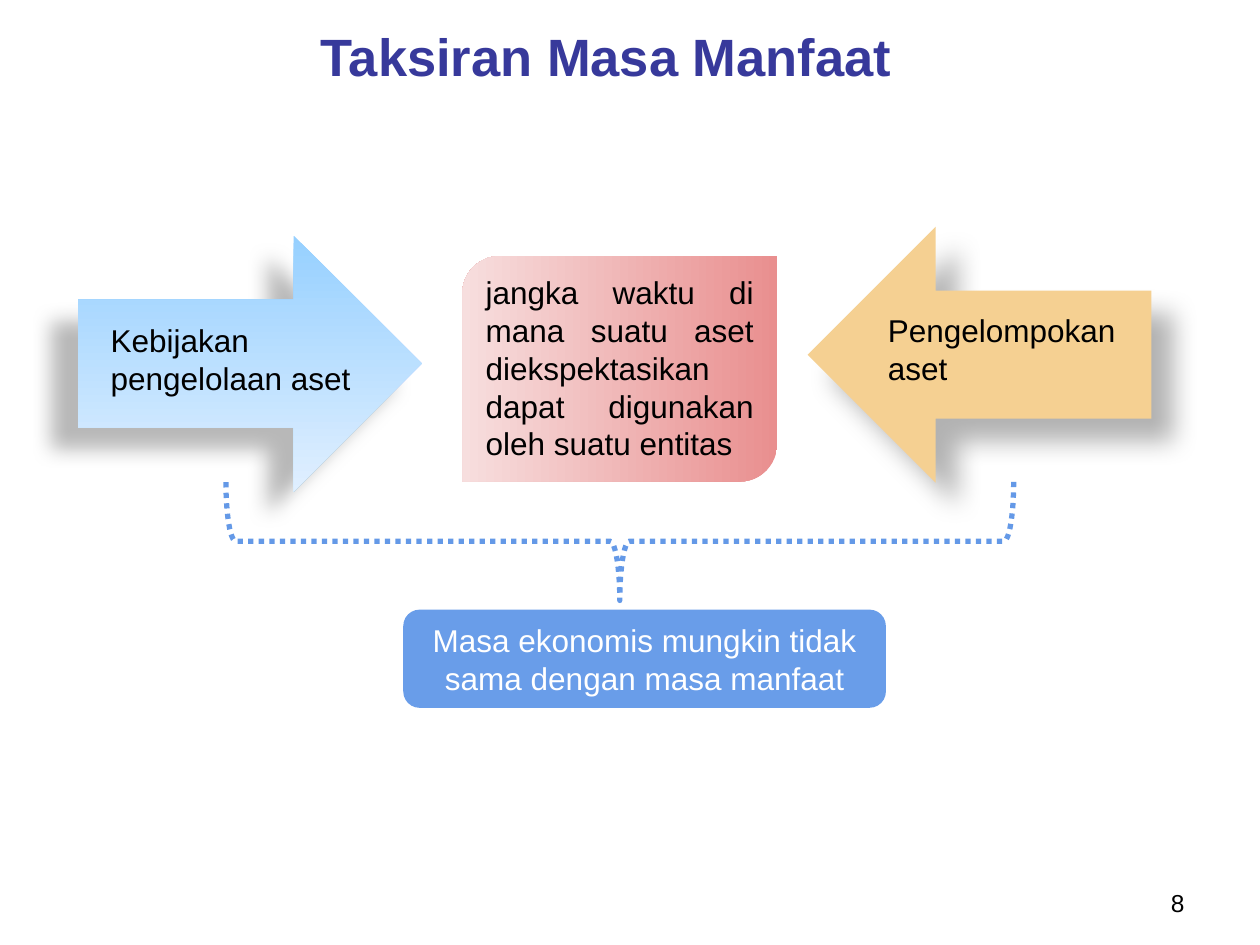
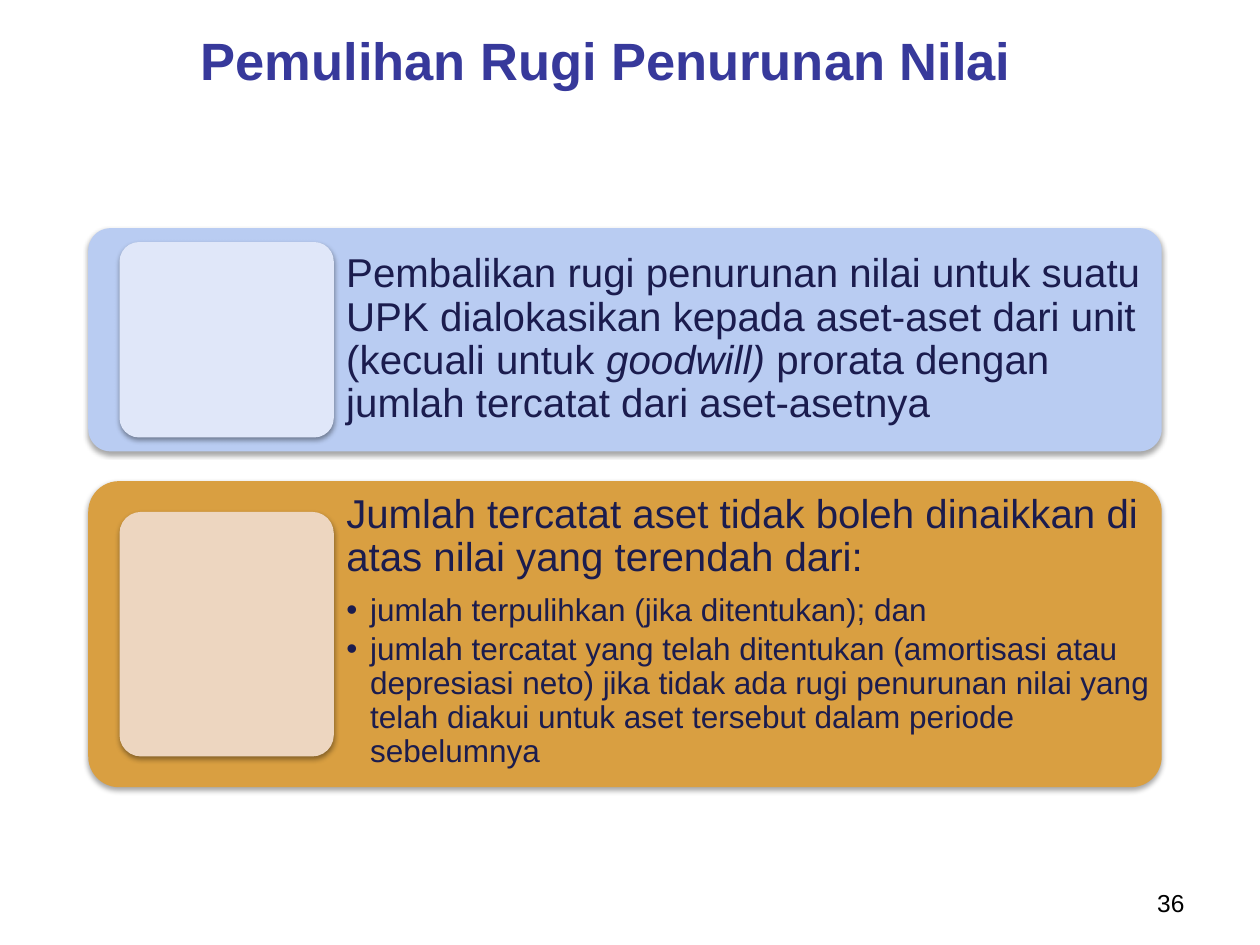
from dataclasses import dataclass

from lxml.etree import SubElement as Sub
from pptx import Presentation as Deck
from pptx.dml.color import RGBColor as Rgb
from pptx.enum.dml import MSO_LINE_DASH_STYLE as Dash
from pptx.enum.shapes import MSO_SHAPE as Form
from pptx.enum.text import MSO_ANCHOR as Anchor, MSO_AUTO_SIZE as Fit, PP_ALIGN as Align
from pptx.oxml.ns import qn
from pptx.util import Cm, Pt


@dataclass(frozen=True)
class Theme:
    """Colours, font and type sizes of the slides."""
    face: str = "Arial"
    head: str = "37399B"
    ink: str = "000000"
    navy: str = "1B1C4E"
    white: str = "FFFFFF"
    rose: tuple = ("E98F8F", "F7DEDE")
    sky: tuple = ("96D0FF", "E0EFFF")
    sand: str = "F5D092"
    brace: str = "6499E7"
    pill: str = "699DE9"
    blue: str = "B9CCF2"
    pale: str = "E0E7F9"
    gold: str = "D99F41"
    cream: str = "EDD6C0"
    title: int = 30
    lead: int = 23
    text: int = 18
    foot: int = 14


T = Theme()
LEAD = dict(line_spacing=0.9, space_before=Pt(0), space_after=Pt(8))
ITEM = dict(LEAD, space_after=Pt(2.7), level=1)
INSET = {"margin_" + side: Cm(0.25) for side in ("left", "top", "right", "bottom")}


def put(thing, **vals):
    """Set each named value on the thing."""
    for name, val in vals.items():
        setattr(thing, name, val)


def place(shape, box):
    """Move a shape to a box given in centimetres."""
    put(shape, **dict(zip(("left", "top", "width", "height"), map(Cm, box))))


def frame(shape, **vals):
    """Return the text frame of a shape, wrapped and formatted."""
    body = shape.text_frame
    put(body, **{"word_wrap": True, "auto_size": Fit.NONE, **vals})
    return body


def write(para, runs, size, tint, bold=False, **vals):
    """Fill a paragraph with plain runs and (text, italic) runs."""
    put(para, **vals)
    for part in runs:
        words, slant = part if isinstance(part, tuple) else (part, False)
        run = para.add_run()
        run.text = words
        put(run.font, name=T.face, size=Pt(size), bold=bold, italic=slant)
        run.font.color.rgb = Rgb.from_string(tint)


def bullet(para, mark=None):
    """Give a paragraph a hanging bullet, or none."""
    props = para._p.get_or_add_pPr()
    hang = Cm(0.48) if mark else 0
    props.set("marL", str(hang))
    props.set("indent", str(-hang))
    if mark:
        Sub(props, qn("a:buChar"), char=mark)
    else:
        Sub(props, qn("a:buNone"))


def shade(shape, alpha, blur, dist, angle):
    """Cast a soft black shadow."""
    list_ = shape._element.spPr.find(qn("a:effectLst"))
    outer = Sub(list_, qn("a:outerShdw"), blurRad=str(Pt(blur)), dist=str(Pt(dist)),
                dir=str(angle * 60000), algn="ctr", rotWithShape="0")
    tint = Sub(outer, qn("a:srgbClr"), val=T.ink)
    Sub(tint, qn("a:alpha"), val=str(alpha * 1000))


def draw(slide, form, box, fill=None, angle=0, shadow=None, round_=None, turn=0):
    """Add a shape with a plain, graded or empty fill and no outline."""
    shape = slide.shapes.add_shape(form, *map(Cm, box))
    put(shape, rotation=turn)
    shape.shadow.inherit = False
    shape.line.fill.background()
    if fill is None:
        shape.fill.background()
    elif isinstance(fill, tuple):
        shape.fill.gradient()
        shape.fill.gradient_angle = angle
        for stop, tint in zip(shape.fill.gradient_stops, fill):
            stop.color.rgb = Rgb.from_string(tint)
    else:
        shape.fill.solid()
        shape.fill.fore_color.rgb = Rgb.from_string(fill)
    if round_:
        shape.adjustments[0] = round_
    if shadow:
        shade(shape, *shadow)
    return shape


def label(slide, box, runs, size, tint, look=None, **vals):
    """Add a text box with one paragraph."""
    body = frame(slide.shapes.add_textbox(*map(Cm, box)), **(look or {}))
    write(body.paragraphs[0], runs, size, tint, **vals)


def start(deck, kind, title, top, page):
    """Add a slide with its title and page number."""
    slide = deck.slides.add_slide(deck.slide_layouts[kind])
    place(slide.shapes.title, (0.79, top, 22.86, 1.57))
    body = frame(slide.shapes.title, vertical_anchor=Anchor.MIDDLE)
    write(body.paragraphs[0], [title], T.title, T.head, bold=True, alignment=Align.CENTER)
    label(slide, (18.21, 17.78, 5.92, 0.89), [page], T.foot, T.ink, alignment=Align.RIGHT)
    return slide


def arrow(slide, left, top, words, spot, **vals):
    """Add a block arrow and its label."""
    draw(slide, Form.RIGHT_ARROW, (left, top, 6.93, 5.16), **vals)
    label(slide, (*spot, 5.77, 1.8), [words], T.text, T.ink)


def card(slide, top, high, gap, fill, tile):
    """Add a wide card with a tile and return the box for its text."""
    draw(slide, Form.ROUNDED_RECTANGLE, (1.78, top, 21.64, high), fill,
         shadow=(35, 3.1, 1.8, 90), round_=0.1)
    draw(slide, Form.ROUNDED_RECTANGLE, (2.41, top + gap, 4.32, high - 2 * gap), tile,
         shadow=(38, 3.1, 1.6, 90), round_=0.1)
    return 6.73, top, 16.69, high


def useful(deck):
    """Build the slide on useful life."""
    slide = start(deck, 5, "Taksiran Masa Manfaat", 0.33, "8")
    core = draw(slide, Form.ROUND_2_DIAG_RECTANGLE, (9.32, 5.16, 6.35, 4.55), T.rose, 180)
    write(frame(core, vertical_anchor=Anchor.TOP).paragraphs[0],
          ["jangka waktu di mana suatu aset diekspektasikan dapat digunakan oleh suatu entitas"],
          T.text, T.ink, alignment=Align.JUSTIFY)
    arrow(slide, 1.57, 4.75, "Kebijakan pengelolaan aset", (1.98, 6.35),
          fill=T.sky, angle=270, shadow=(28, 11.8, 19.7, 141))
    arrow(slide, 16.28, 4.57, "Pengelompokan aset", (17.65, 6.15),
          fill=T.sand, turn=180, shadow=(30, 15, 18, 45))
    brace = draw(slide, Form.LEFT_BRACE, (11.3, 2.97, 2.39, 15.88), turn=270)
    brace.line.color.rgb = Rgb.from_string(T.brace)
    put(brace.line, width=Pt(3), dash_style=Dash.ROUND_DOT)
    pill = draw(slide, Form.ROUNDED_RECTANGLE, (8.13, 12.29, 9.73, 1.98), T.pill)
    write(frame(pill, vertical_anchor=Anchor.MIDDLE).paragraphs[0],
          ["Masa ekonomis mungkin tidak sama dengan masa manfaat"],
          T.text, T.white, alignment=Align.CENTER)


def revert(deck):
    """Build the slide on reversing an impairment loss."""
    slide = start(deck, 1, "Pemulihan Rugi Penurunan Nilai", 0.41, "36")
    box = card(slide, 4.6, 4.5, 0.28, T.blue, T.pale)
    label(slide, box,
          ["Pembalikan rugi penurunan nilai untuk suatu UPK dialokasikan kepada "
           "aset-aset dari unit (kecuali untuk ", ("goodwill) ", True),
           "prorata dengan jumlah tercatat dari aset-asetnya"],
          T.lead, T.navy, dict(INSET, vertical_anchor=Anchor.MIDDLE), **LEAD)
    box = card(slide, 9.7, 6.17, 0.62, T.gold, T.cream)
    list_ = slide.placeholders[1]
    place(list_, box)
    slide.shapes._spTree.append(list_._element)
    body = frame(list_, vertical_anchor=Anchor.TOP, **INSET)
    first = body.paragraphs[0]
    bullet(first)
    write(first, ["Jumlah tercatat aset tidak boleh dinaikkan di atas nilai yang terendah dari:"],
          T.lead, T.navy, **LEAD)
    for words in ("jumlah terpulihkan (jika ditentukan); dan",
                  "jumlah tercatat yang telah ditentukan (amortisasi atau depresiasi neto) jika "
                  "tidak ada rugi penurunan nilai yang telah diakui untuk aset tersebut dalam "
                  "periode sebelumnya"):
        para = body.add_paragraph()
        bullet(para, "•")
        write(para, [words], T.text, T.navy, **ITEM)


def main():
    """Build and save the slides."""
    deck = Deck()
    put(deck, slide_width=Cm(25.4), slide_height=Cm(19.05))
    useful(deck)
    revert(deck)
    deck.save("out.pptx")


if __name__ == "__main__":
    main()
